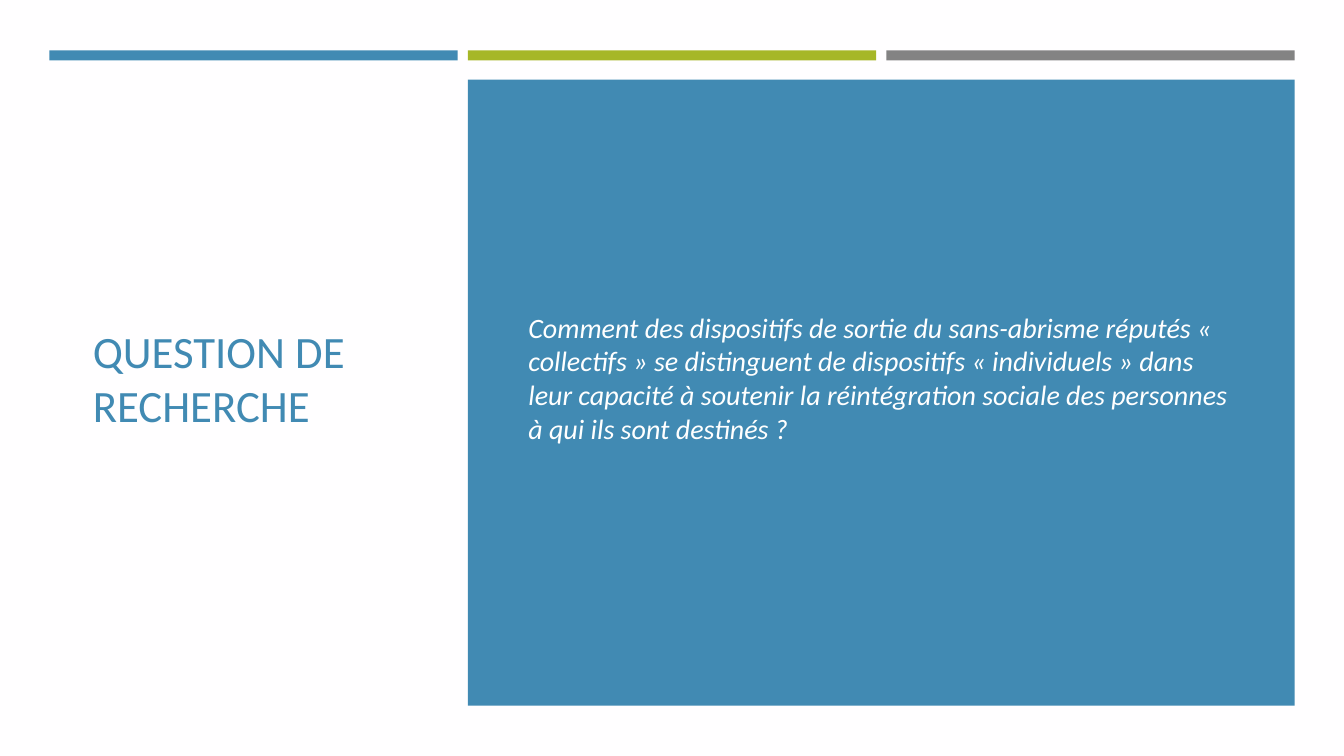
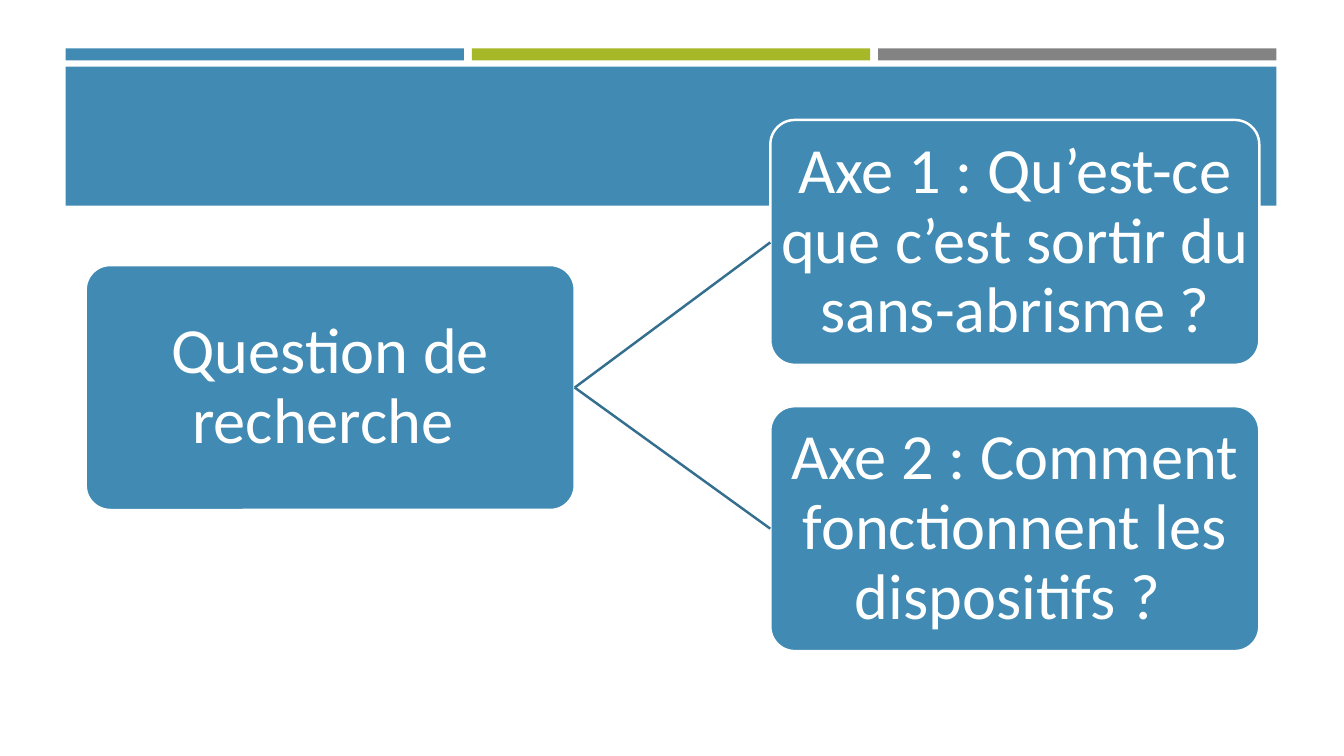
from dataclasses import dataclass
from lxml import etree
from pptx import Presentation
from pptx.dml.color import RGBColor
from pptx.enum import shapes, text
from pptx.oxml import ns
from pptx.util import Inches, Pt


@dataclass(frozen=True)
class Theme:
    font: str = "Calibri"
    blue: str = "418AB3"
    green: str = "A6B727"
    gray: str = "838383"
    link: str = "346F8F"
    white: str = "FFFFFF"
    paper: str = "FFFEFF"
    title: int = 32
    body: int = 20
    node: int = 46
    line: float = 1.75


T = Theme()
RECT = shapes.MSO_SHAPE.RECTANGLE
ROUND = shapes.MSO_SHAPE.ROUNDED_RECTANGLE

TITLE = "QUESTION DE RECHERCHE"
BODY = (
    "Comment des dispositifs de sortie du sans-abrisme réputés "
    "« collectifs » se distinguent de dispositifs « individuels » dans "
    "leur capacité à soutenir la réintégration sociale des personnes "
    "à qui ils sont destinés ? "
)
ROOT = ("Question de recherche ", 0.85, 2.63)
AXES = [
    ("Axe 1 : Qu’est-ce que c’est sortir du sans-abrisme ?", 7.64, 1.19),
    ("Axe 2 : Comment fonctionnent les dispositifs ? ", 7.64, 4.03),
]
NODE = (4.85, 2.43)


def rgb(code):
    return RGBColor.from_string(code)


def block(slide, kind, box, color):
    shape = slide.shapes.add_shape(kind, *map(Inches, box))
    shape.shadow.inherit = False
    shape.fill.solid()
    shape.fill.fore_color.rgb = rgb(color)
    shape.line.fill.background()
    return shape


def bars(slide, left, top, total, gap, height):
    width = (total - 2 * gap) / 3
    for i, color in enumerate((T.blue, T.green, T.gray)):
        box = (left + i * (width + gap), top, width, height)
        block(slide, RECT, box, color)


def write(shape, words, size, color, align, italic=False):
    frame = shape.text_frame
    frame.text = words
    frame.word_wrap = True
    frame.auto_size = text.MSO_AUTO_SIZE.NONE
    frame.vertical_anchor = text.MSO_ANCHOR.MIDDLE
    para = frame.paragraphs[0]
    para.alignment = align
    font = para.runs[0].font
    font.name, font.size, font.italic = T.font, Pt(size), italic
    font.color.rgb = rgb(color)
    return para


def place(shape, box):
    shape.left, shape.top, shape.width, shape.height = map(Inches, box)


def node(slide, words, left, top):
    shape = block(slide, ROUND, (left, top, *NODE), T.blue)
    shape.adjustments[0] = 0.1
    shape.line.color.rgb = rgb(T.white)
    shape.line.width = Pt(T.line)
    frame = shape.text_frame
    frame.margin_left = frame.margin_right = Inches(0.03)
    frame.margin_top = frame.margin_bottom = Inches(0.03)
    para = write(shape, words, T.node, T.white, text.PP_ALIGN.CENTER)
    para.line_spacing = 0.9
    return shape


def join(slide, start, end):
    line = slide.shapes.add_connector(shapes.MSO_CONNECTOR.STRAIGHT, 0, 0, 0, 0)
    line.begin_connect(start, 3)
    line.end_connect(end, 1)
    line.line.color.rgb = rgb(T.link)
    line.line.width = Pt(T.line)
    etree.SubElement(line.element.spPr, ns.qn("a:effectLst"))


def question(deck):
    slide = deck.slides.add_slide(deck.slide_layouts[1])
    slide.background.fill.solid()
    slide.background.fill.fore_color.rgb = rgb(T.paper)
    bars(slide, 0.49, 0.5, 12.35, 0.1, 0.1)
    block(slide, RECT, (4.64, 0.79, 8.2, 6.21), T.blue)

    title = slide.shapes.title
    place(title, (0.82, 1.17, 3.34, 5.15))
    write(title, TITLE, T.title, T.blue, text.PP_ALIGN.LEFT)

    body = slide.placeholders[1]
    place(body, (5.14, 1.17, 7.22, 5.15))
    para = write(body, BODY, T.body, T.white, text.PP_ALIGN.LEFT, True)
    para.space_after = Pt(6)
    props = para._p.get_or_add_pPr()
    props.set("marL", "0")
    props.set("indent", "0")
    etree.SubElement(props, ns.qn("a:buNone"))
    slide.shapes.element.append(body.element)


def axes(deck):
    slide = deck.slides.add_slide(deck.slide_layouts[6])
    bars(slide, 0.65, 0.48, 12.01, 0.08, 0.12)
    block(slide, RECT, (0.65, 0.66, 12.01, 1.38), T.blue)
    root = node(slide, *ROOT)
    for axis in AXES:
        join(slide, root, node(slide, *axis))


def main():
    deck = Presentation()
    deck.slide_width, deck.slide_height = Inches(13.33), Inches(7.5)
    question(deck)
    axes(deck)
    deck.save("out.pptx")


if __name__ == "__main__":
    main()
